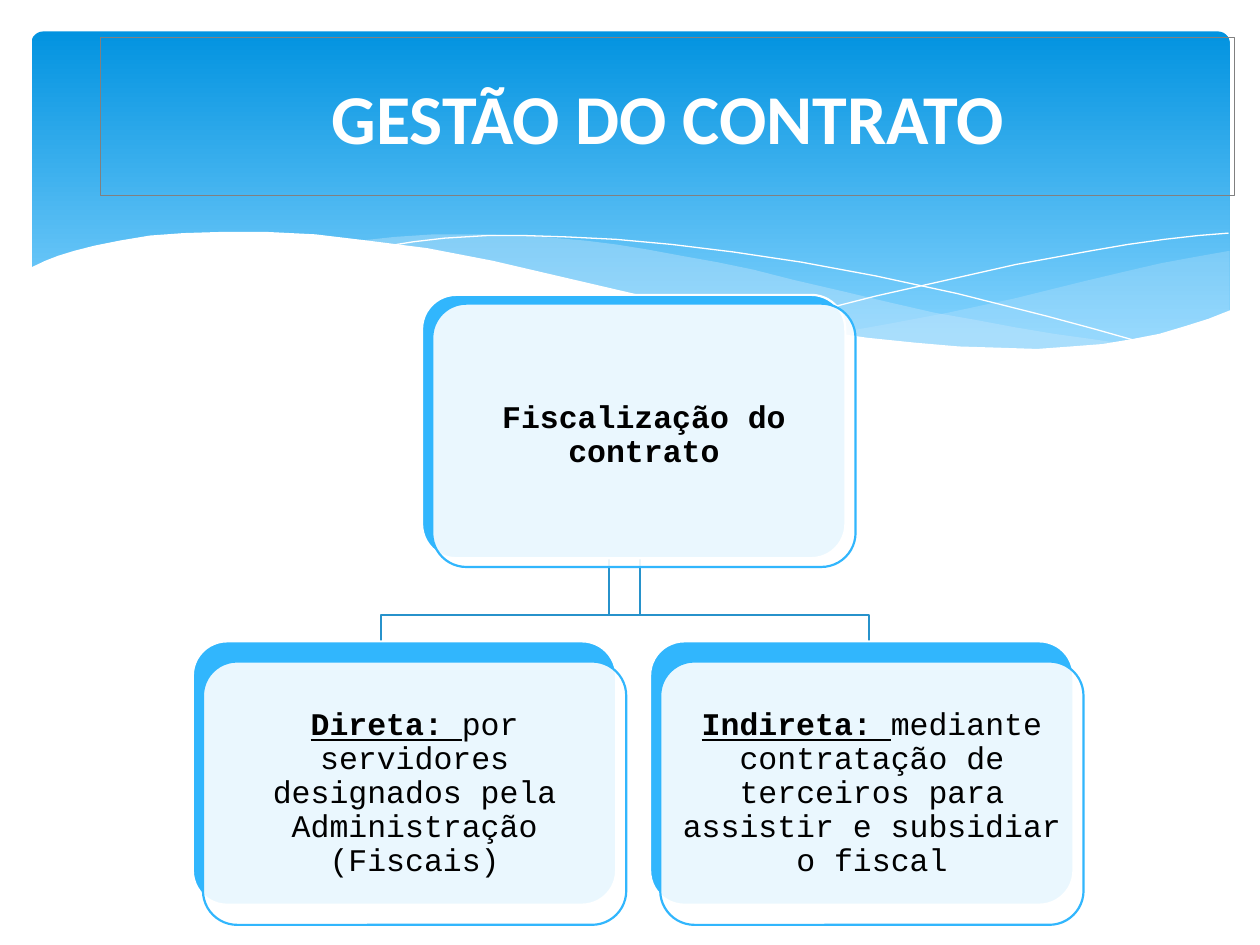
"""Build the contract management slide with its two-branch hierarchy."""
from lxml.etree import SubElement
from pptx import Presentation
from pptx.dml.color import RGBColor
from pptx.enum.shapes import MSO_SHAPE
from pptx.enum.text import MSO_ANCHOR, PP_ALIGN
from pptx.oxml.ns import qn
from pptx.util import Pt

COLORS = {
    "banner top": "0293E0", "banner bottom": "83D3FE", "wave": "C6E7FC",
    "white": "FFFFFF", "black": "000000", "card": "31B6FD",
    "branch": "2792CB", "frame": "808080",
}


def paint(shape, fill=None, line=None, width=0, opacity=100):
    shape.shadow.inherit = False
    if fill:
        shape.fill.solid()
        shape.fill.fore_color.rgb = RGBColor.from_string(COLORS[fill])
        if opacity < 100:
            color = shape.fill._xPr.find(qn("a:solidFill"))[0]
            SubElement(color, qn("a:alpha"), val=str(opacity * 1000))
    else:
        shape.fill.background()
    if line:
        shape.line.color.rgb = RGBColor.from_string(COLORS[line])
        shape.line.width = Pt(width)
    else:
        shape.line.fill.background()


def add_outline(points, close):
    (left, top), *others = [(Pt(x), Pt(y)) for x, y in points]
    builder = slide.shapes.build_freeform(left, top)
    builder.add_line_segments(others, close=close)
    return builder.convert_to_shape()


presentation = Presentation()
presentation.slide_width, presentation.slide_height = Pt(720), Pt(540)
slide = presentation.slides.add_slide(presentation.slide_layouts[6])

banner = slide.shapes.add_shape(
    MSO_SHAPE.ROUNDED_RECTANGLE, Pt(18), Pt(18), Pt(684.7), Pt(194.4))
banner.adjustments[0] = 0.034
paint(banner)
banner.fill.gradient()
banner.fill.gradient_angle = 270
for stop, name, position in zip(
        banner.fill.gradient_stops, ("banner top", "banner bottom"), (0, 0.9)):
    stop.color.rgb = RGBColor.from_string(COLORS[name])
    stop.position = position

right_wave = [
    (702.7, 143.3), (682.6, 146.9), (663.1, 150.5), (641.5, 155.5), (620, 160.6),
    (579.6, 170.6), (542.2, 178.6), (508.3, 185), (475.9, 190.8), (497.5, 193.7),
    (517, 195.8), (536.4, 198), (553.7, 199.4), (578.2, 200.2), (601.2, 199.4),
    (621.4, 198), (640.1, 195.8), (657.4, 192.2), (673.2, 187.9), (683.3, 185),
    (693.4, 181.4), (702.7, 177.8),
]
middle_wave = [
    (643, 196.6), (623.5, 193.7), (602.6, 190.8), (581, 187.2), (558, 182.9),
    (533.5, 178.6), (508.3, 172.8), (481, 166.3), (452.9, 159.8), (430.6, 154.1),
    (409.7, 149.8), (389.5, 146.2), (370.1, 142.6), (352.1, 139.7), (334.8, 137.5),
    (318.2, 136.1), (302.4, 134.6), (273.6, 133.9), (247.7, 133.9), (225.4, 135.4),
    (205.9, 137.5), (232.6, 141.1), (260.6, 146.2), (290.9, 151.9), (323.3, 159.8),
    (353.5, 167), (381.6, 172.8), (407.5, 178.6), (432.7, 183.6), (456.5, 187.9),
    (478.8, 191.5), (500.4, 194.4), (519.8, 197.3), (538.6, 198.7), (565.2, 200.2),
    (596.2, 200.2), (617, 199.4),
]
falling_curve = [
    (222.5, 140.4), (236.2, 138.2), (254.2, 136.1), (278.6, 134.6), (299.5, 134.6),
    (324, 135.4), (352.1, 136.8), (383.8, 139.7), (419, 144), (457.9, 149.8),
    (500.4, 157.7), (547.2, 167.8), (598.3, 180.7), (625, 187.9), (653, 195.8),
]
rising_curve = [
    (441.4, 185), (469.4, 177.1), (500.4, 169.2), (538.6, 160.6), (580.3, 151.2),
    (623.5, 143.3), (644.4, 139.7), (665.3, 136.8), (684.7, 134.6), (702, 133.2),
]
white_wave = [
    (703.4, 177.1), (690.5, 182.2), (676.8, 186.5), (662.4, 190.8), (647.3, 193.7),
    (630, 196.6), (612, 198), (592.6, 199.4), (571, 198.7), (547.9, 198),
    (522.7, 195.8), (495.4, 193), (465.8, 188.6), (434.2, 182.9), (399.6, 176.4),
    (362.2, 167.8), (321.8, 158.4), (281.5, 149), (244.1, 141.8), (210.2, 137.5),
    (180, 133.9), (151.9, 132.5), (127.4, 132.5), (105.1, 133.2), (85.7, 134.6),
    (68.4, 137.5), (54, 140.4), (42.5, 143.3), (33.1, 146.2), (25.9, 149),
    (16.6, 153.4), (16.6, 236.9), (703.4, 236.9),
]
for points, opacity in ((right_wave, 29), (middle_wave, 40)):
    paint(add_outline(points, True), fill="wave", opacity=opacity)
for points in (falling_curve, rising_curve):
    paint(add_outline(points, False), line="white")
paint(add_outline(white_wave, True), fill="white")

for start, end in ((348.2, 496.4), (365.6, 217.6)):
    branch = [(start, 304.6), (start, 351.4), (end, 351.4), (end, 373.7)]
    paint(add_outline(branch, False), line="branch", width=1.25)

cards = [
    (241.2, 168.5, 5, "Fiscalização do contrato", ""),
    (110.2, 366.5, 11.5, "Direta: ",
     "por servidores designados pela Administração (Fiscais)"),
    (371.5, 366.5, 11.5, "Indireta: ",
     "mediante contratação de terceiros para assistir e subsidiar o fiscal"),
]
for left, top, drop, heading, detail in cards:
    for x, y, fill, line, opacity in (
            (left, top, "card", "white", 100),
            (left + 5.8, top + drop, "white", "card", 90)):
        card = slide.shapes.add_shape(
            MSO_SHAPE.ROUNDED_RECTANGLE, Pt(x), Pt(y), Pt(241.9), Pt(150.5))
        card.adjustments[0] = 0.13
        paint(card, fill, line, 1.25, opacity)
    frame = card.text_frame
    frame.word_wrap = True
    frame.vertical_anchor = MSO_ANCHOR.MIDDLE
    frame.margin_left = frame.margin_right = Pt(5.8)
    frame.margin_top = frame.margin_bottom = Pt(9.4)
    paragraph = frame.paragraphs[0]
    paragraph.alignment = PP_ALIGN.CENTER
    paragraph.line_spacing = 0.9
    for text, bold in ((heading, True), (detail, False)):
        if text:
            run = paragraph.add_run()
            run.text = text
            run.font.name, run.font.size = "Courier New", Pt(18)
            run.font.bold = bold
            run.font.underline = bold and bool(detail)
            run.font.color.rgb = RGBColor.from_string(COLORS["black"])

title = slide.shapes.add_shape(
    MSO_SHAPE.RECTANGLE, Pt(57.6), Pt(21.6), Pt(648), Pt(90))
paint(title, line="frame", width=0.75)
title.text_frame.word_wrap = True
title.text_frame.vertical_anchor = MSO_ANCHOR.MIDDLE
paragraph = title.text_frame.paragraphs[0]
paragraph.text = "GESTÃO DO CONTRATO"
paragraph.alignment = PP_ALIGN.CENTER
paragraph.font.name, paragraph.font.size = "Calibri", Pt(40)
paragraph.font.bold = True
paragraph.font.color.rgb = RGBColor.from_string(COLORS["white"])

presentation.save("out.pptx")
